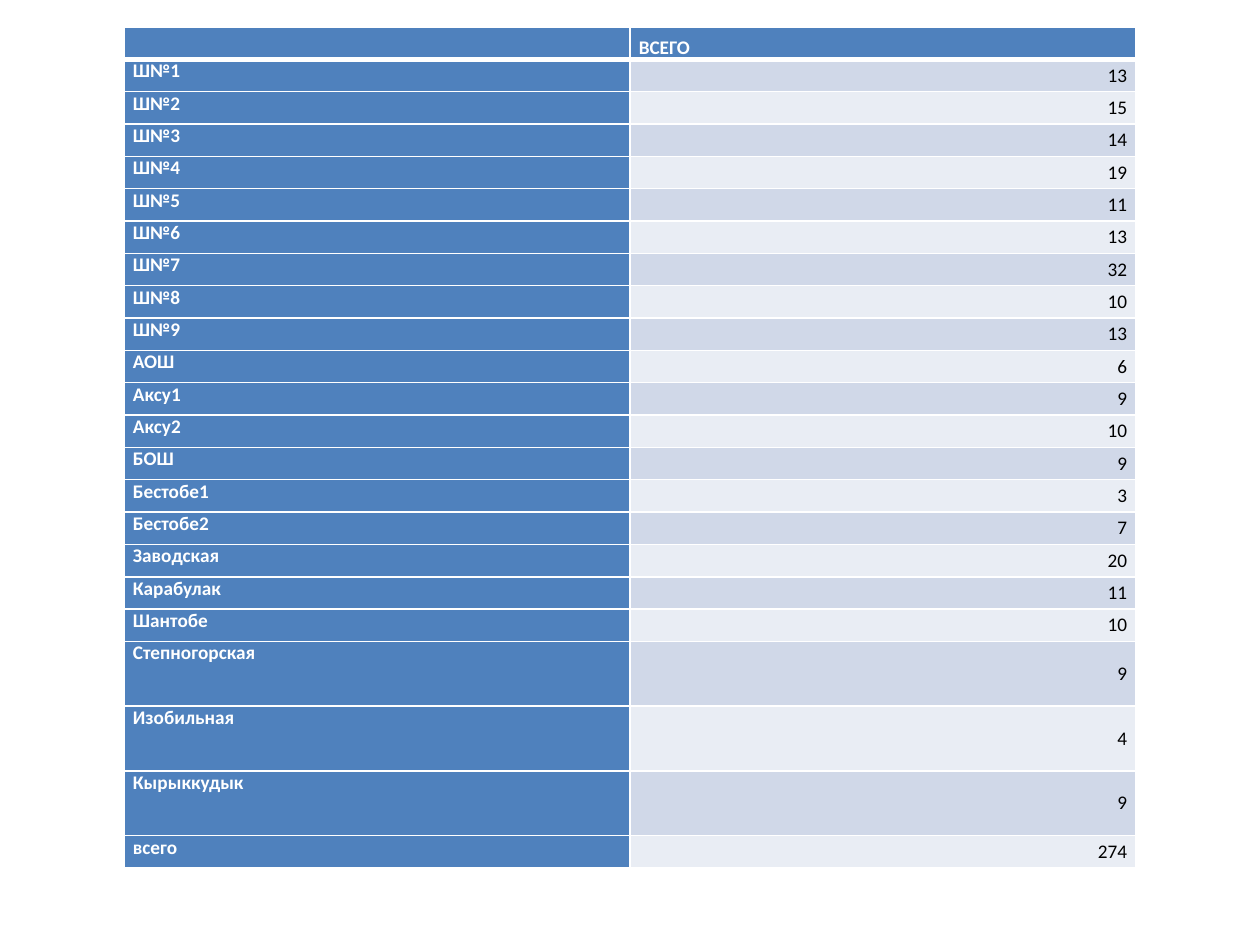
from lxml import etree
from pptx import Presentation
from pptx import util as u
from pptx.dml import color
from pptx.enum import text
from pptx.oxml import ns

COLORS = {
    "head": "4F81BD",
    "odd": "D0D8E8",
    "even": "E9EDF4",
    "light": "FFFFFF",
    "dark": "000000",
}
SLIDE_SIZE = {"slide_width": u.Inches(10), "slide_height": u.Inches(7.5)}
LEFT, TOP, WIDTH, HEIGHT = 0.1, 0.03, 0.8, 0.89
LEFT, TOP, WIDTH = 0.0985, 0.0285, 0.803
FONT = {"name": "Calibri", "size": u.Pt(11)}
MARGINS = {
    "margin_left": u.Inches(0.07),
    "margin_right": u.Inches(0.07),
    "margin_top": 0,
    "margin_bottom": 0,
}
ANCHOR, ALIGN = text.MSO_ANCHOR, text.PP_ALIGN
HEADER = {"fill": "head", "ink": "light", "bold": True,
          "anchor": ANCHOR.BOTTOM, "align": ALIGN.LEFT}
LABEL = {**HEADER, "anchor": ANCHOR.TOP}
VALUE = {"ink": "dark", "bold": False,
         "anchor": ANCHOR.MIDDLE, "align": ALIGN.RIGHT}
SCHOOLS = [
    ("Ш№1", 13), ("Ш№2", 15), ("Ш№3", 14), ("Ш№4", 19), ("Ш№5", 11),
    ("Ш№6", 13), ("Ш№7", 32), ("Ш№8", 10), ("Ш№9", 13), ("АОШ", 6),
    ("Аксу1", 9), ("Аксу2", 10), ("БОШ", 9), ("Бестобе1", 3),
    ("Бестобе2", 7), ("Заводская", 20), ("Карабулак", 11), ("Шантобе", 10),
    ("Степногорская", 9), ("Изобильная", 4), ("Кырыккудык", 9),
    ("всего", 274),
]
TALL_ROWS = {"Степногорская", "Изобильная", "Кырыккудык"}


def set_attributes(target, values):
    """Set each named attribute of the target."""
    for name, value in values.items():
        setattr(target, name, value)


def add_borders(cell, widths):
    """Draw white cell borders with widths in points by side."""
    properties = cell._tc.get_or_add_tcPr()
    for index, side in enumerate("LRTB"):
        line = etree.Element(ns.qn(f"a:ln{side}"), w=str(u.Pt(widths.get(side, 1))))
        fill = etree.SubElement(line, ns.qn("a:solidFill"))
        etree.SubElement(fill, ns.qn("a:srgbClr"), val=COLORS["light"])
        properties.insert(index, line)


def write_text(cell, content, style):
    """Write one formatted paragraph, keeping an empty one small."""
    paragraph = cell.text_frame.paragraphs[0]
    paragraph.alignment = style["align"]
    if not content:
        etree.SubElement(paragraph._p, ns.qn("a:endParaRPr"),
                         sz=str(FONT["size"].centipoints))
        return
    run = paragraph.add_run()
    run.text = content
    set_attributes(run.font, {**FONT, "bold": style["bold"]})
    run.font.color.rgb = color.RGBColor.from_string(COLORS[style["ink"]])


def format_cell(cell, content, style, widths):
    """Fill, border and write one cell."""
    set_attributes(cell, {**MARGINS, "vertical_anchor": style["anchor"]})
    cell.fill.solid()
    cell.fill.fore_color.rgb = color.RGBColor.from_string(COLORS[style["fill"]])
    add_borders(cell, widths)
    write_text(cell, content, style)


def add_school_table(presentation, slide):
    """Add the table of totals by school."""
    width, height = presentation.slide_width, presentation.slide_height
    rows = [("", "ВСЕГО")] + [(name, str(total)) for name, total in SCHOOLS]
    table = slide.shapes.add_table(
        len(rows), 2, int(LEFT * width), int(TOP * height),
        int(WIDTH * width), int(HEIGHT * height)).table
    table.horz_banding = False
    unit = int(HEIGHT * height / (len(rows) + len(TALL_ROWS)))
    for index, (name, total) in enumerate(rows):
        table.rows[index].height = unit * (2 if name in TALL_ROWS else 1)
        band = {**VALUE, "fill": "odd" if index % 2 else "even"}
        styles = (LABEL, band) if index else (HEADER, HEADER)
        widths = {0: {"B": 3}, 1: {"T": 3}}.get(index, {})
        for column, content in enumerate((name, total)):
            format_cell(table.cell(index, column), content, styles[column], widths)


def main():
    """Build and save the presentation."""
    presentation = Presentation()
    set_attributes(presentation, SLIDE_SIZE)
    slide = presentation.slides.add_slide(presentation.slide_layouts[6])
    add_school_table(presentation, slide)
    presentation.save("out.pptx")


if __name__ == "__main__":
    main()
